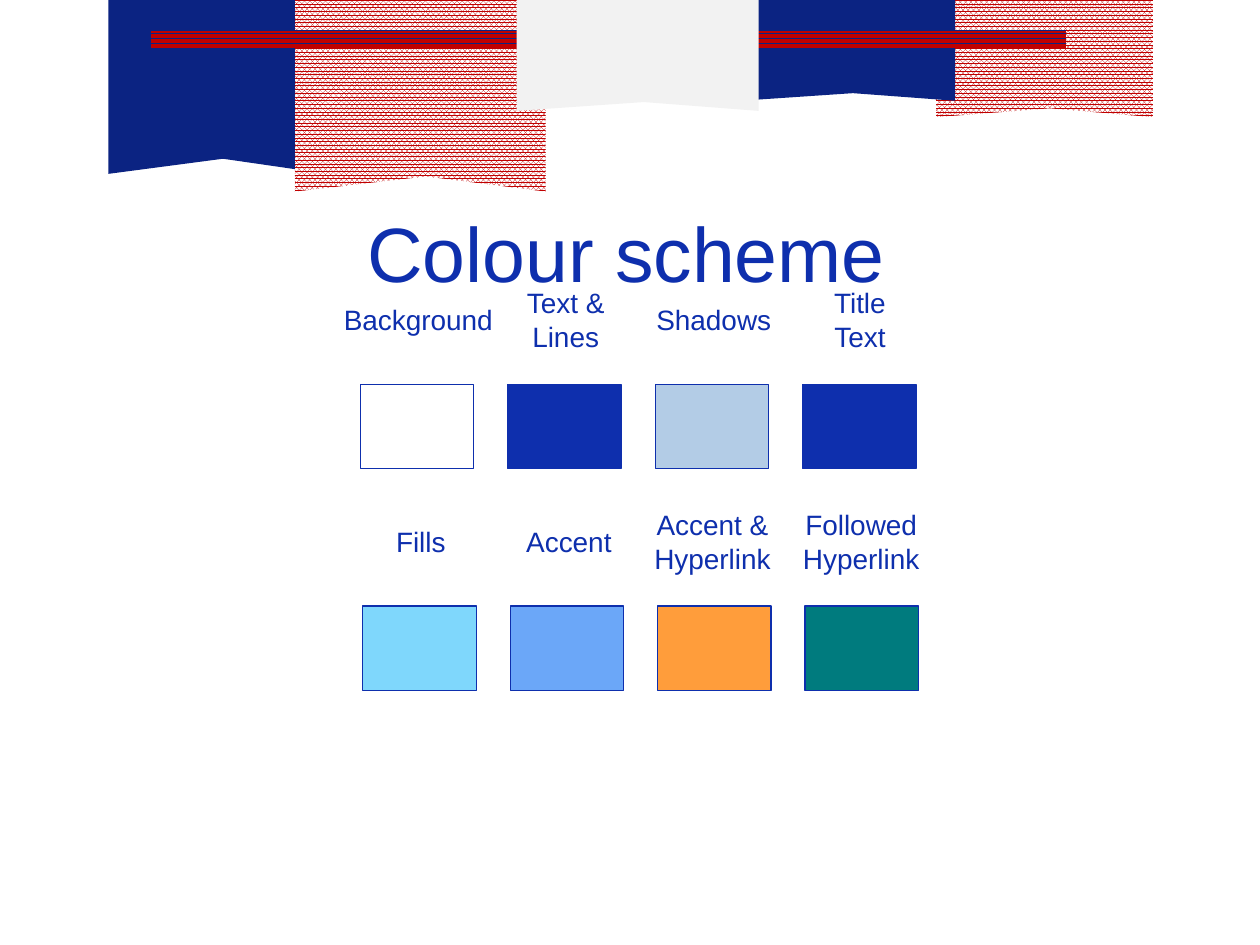
"""Build the colour scheme slide with its bunting header and labelled swatches."""
from pptx import Presentation
from pptx.dml.color import RGBColor
from pptx.enum import dml, shapes, text
from pptx.util import Inches, Pt

BLUE = RGBColor(0x0E, 0x2F, 0xAD)
NAVY = RGBColor(0x0B, 0x23, 0x82)
RED = RGBColor(0xC0, 0x00, 0x00)
GREY = RGBColor(0xF2, 0xF2, 0xF2)
WHITE = RGBColor(0xFF, 0xFF, 0xFF)
PALE_BLUE = RGBColor(0xB3, 0xCC, 0xE6)
SKY = RGBColor(0x7F, 0xD7, 0xFC)
CORNFLOWER = RGBColor(0x6B, 0xA7, 0xF8)
ORANGE = RGBColor(0xFF, 0x9D, 0x3B)
TEAL = RGBColor(0x00, 0x7B, 0x7E)


def paint(sp, color, pattern=None, back=WHITE):
    sp.shadow.inherit = False
    sp.line.fill.background()
    if pattern is None:
        sp.fill.solid()
        sp.fill.fore_color.rgb = color
    else:
        sp.fill.patterned()
        sp.fill.pattern = pattern
        sp.fill.fore_color.rgb = color
        sp.fill.back_color.rgb = back


def add_flag(left, notch, right, notch_y, bottom, color, pattern=None):
    fb = s.shapes.build_freeform(Inches(left), 0)
    points = [(right, 0), (right, bottom), (notch, notch_y), (left, bottom)]
    fb.add_line_segments([(Inches(x), Inches(y)) for x, y in points])
    paint(fb.convert_to_shape(), color, pattern)


prs = Presentation()
prs.slide_width, prs.slide_height = Inches(10), Inches(7.5)
s = prs.slides.add_slide(prs.slide_layouts[5])

DOTS = dml.MSO_PATTERN.PERCENT_80
add_flag(0.86, 1.77, 2.6, 1.26, 1.38, NAVY)
add_flag(2.34, 3.38, 4.33, 1.4, 1.52, RED, DOTS)
add_flag(7.43, 8.33, 9.15, 0.86, 0.93, RED, DOTS)
add_flag(5.88, 6.77, 7.58, 0.74, 0.8, NAVY)
ribbon = s.shapes.add_shape(shapes.MSO_SHAPE.RECTANGLE, Inches(1.2), Inches(0.24), Inches(7.26), Inches(0.14))
paint(ribbon, RED, dml.MSO_PATTERN.DARK_HORIZONTAL, NAVY)
add_flag(4.1, 5.11, 6.02, 0.81, 0.88, GREY)

title = s.shapes.title
title.left, title.top, title.width, title.height = Inches(0.47), Inches(1.37), Inches(9), Inches(1.25)
tf = title.text_frame
tf.text = "Colour scheme"
tf.vertical_anchor = text.MSO_ANCHOR.MIDDLE
p = tf.paragraphs[0]
p.alignment = text.PP_ALIGN.CENTER
p.font.name, p.font.size, p.font.color.rgb = "Arial", Pt(44), BLUE

rows = [
    (2.86, [("Background", 2.62, 1.4, WHITE), ("Text &\nLines", 4.06, 0.86, BLUE),
            ("Shadows", 5.1, 1.13, PALE_BLUE), ("Title\vText", 6.5, 0.65, BLUE)]),
    (2.88, [("Fills", 3.03, 0.62, SKY), ("Accent", 4.07, 0.89, CORNFLOWER),
            ("Accent &\nHyperlink", 5.08, 1.15, ORANGE), ("Followed\nHyperlink", 6.26, 1.15, TEAL)]),
]
for row, (first_left, swatches) in enumerate(rows):
    drop = 1.76 * row
    for col, (label, left, width, color) in enumerate(swatches):
        sp = s.shapes.add_shape(shapes.MSO_SHAPE.RECTANGLE, Inches(first_left + 1.17 * col),
                                Inches(3.05 + drop), Inches(0.9), Inches(0.67))
        paint(sp, color)
        sp.line.color.rgb = BLUE
        sp.line.width = Pt(0.75)

        height = 0.37 if label.isalpha() else 0.64
        tb = s.shapes.add_textbox(Inches(left), Inches(2.54 + drop - height / 2), Inches(width), Inches(height))
        tf = tb.text_frame
        tf.word_wrap = False
        tf.auto_size = text.MSO_AUTO_SIZE.SHAPE_TO_FIT_TEXT
        tf.text = label
        for p in tf.paragraphs:
            p.alignment = text.PP_ALIGN.CENTER
            p.font.name, p.font.size, p.font.color.rgb = "Arial", Pt(16), BLUE

prs.save("out.pptx")
